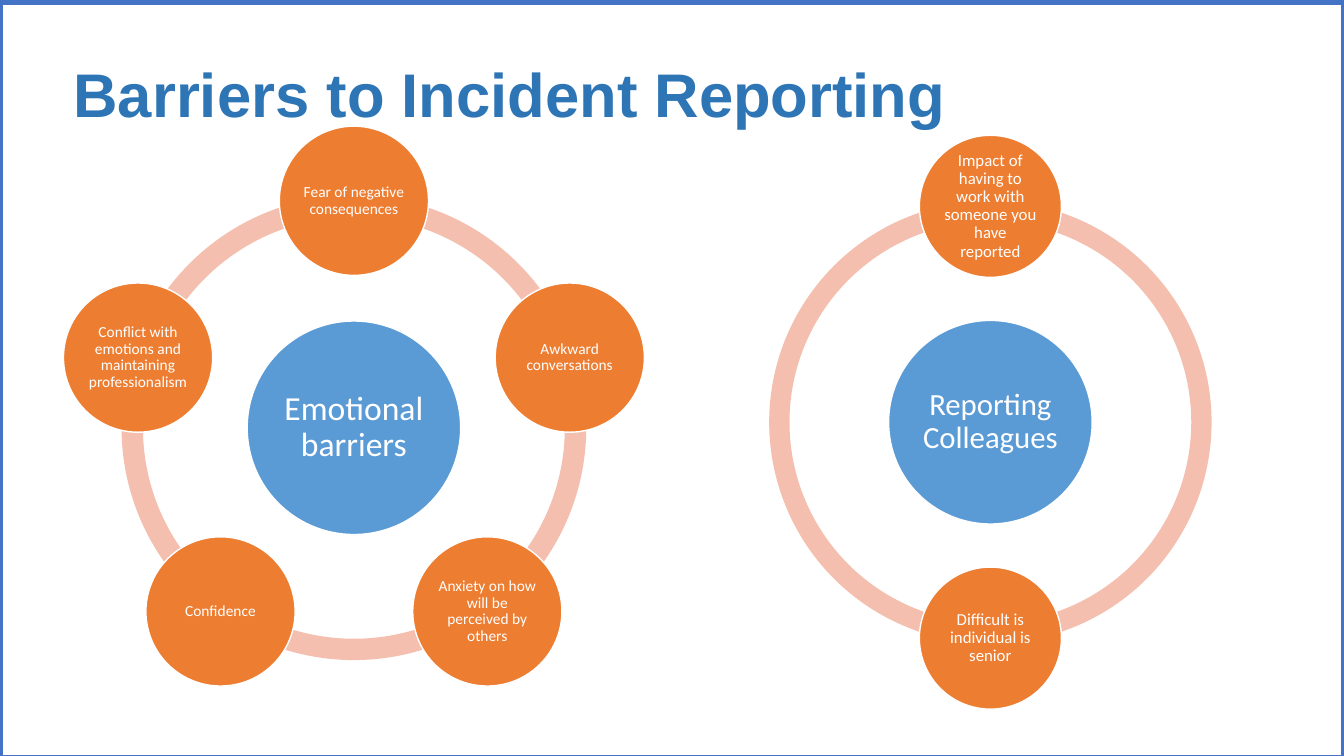
import math

import pptx
import pptx.dml.color
import pptx.enum.shapes
import pptx.enum.text
import pptx.util

Cm = pptx.util.Cm
Pt = pptx.util.Pt
SHAPE = pptx.enum.shapes.MSO_SHAPE
ALIGN = pptx.enum.text.PP_ALIGN

COLOURS = {
    "frame": "4472C4",
    "title": "2E75B6",
    "hub": "5B9BD5",
    "node": "ED7D31",
    "ring": "F4BFAE",
    "white": "FFFFFF",
}
TITLE = "Barriers to Incident Reporting"

# Lengths in cm, text sizes in points; nodes run clockwise from the top.
WHEELS = [
    {
        "hub": "Reporting Colleagues",
        "nodes": [
            "Impact of having to work with someone you have reported",
            "Difficult is individual is senior",
        ],
        "centre": (24.96, 10.64),
        "ring_size": 11.15, "orbit": 5.44, "hub_size": 5.13, "node_size": 3.58,
        "hub_pt": 22, "node_pt": 12,
    },
    {
        "hub": "Emotional barriers",
        "nodes": [
            "Fear of negative consequences",
            "Awkward conversations",
            "Anxiety on how will be perceived by others",
            "Confidence",
            "Conflict with emotions and maintaining professionalism",
        ],
        "centre": (8.92, 10.78),
        "ring_size": 11.71, "orbit": 5.72, "hub_size": 5.38, "node_size": 3.76,
        "hub_pt": 24, "node_pt": 11,
    },
]
RING_THICKNESS = 0.046
TOP_ANGLE = 270
ADJUSTMENT_PER_DEGREE = 0.6


def colour(name):
    return pptx.dml.color.RGBColor.from_string(COLOURS[name])


def write(shape, text, *, size, font="Calibri", ink="white", bold=False,
          align=ALIGN.CENTER, inset=0.06):
    frame = shape.text_frame
    frame.word_wrap = True
    frame.vertical_anchor = pptx.enum.text.MSO_ANCHOR.MIDDLE
    if inset is not None:
        frame.margin_left = frame.margin_right = Cm(inset)
        frame.margin_top = frame.margin_bottom = Cm(inset)
    paragraph = frame.paragraphs[0]
    paragraph.alignment = align
    paragraph.line_spacing = 0.9
    run = paragraph.add_run()
    run.text = text
    run.font.name = font
    run.font.size = Pt(size)
    run.font.bold = bold
    run.font.color.rgb = colour(ink)


def add_centred(shapes, kind, centre, size, fill):
    """Add a square-bounded shape around its centre, with no line."""
    x, y = centre
    shape = shapes.add_shape(kind, Cm(x - size / 2), Cm(y - size / 2), Cm(size), Cm(size))
    shape.shadow.inherit = False
    shape.fill.solid()
    shape.fill.fore_color.rgb = colour(fill)
    shape.line.fill.background()
    return shape


def add_disc(shapes, text, centre, size, fill, text_size):
    disc = add_centred(shapes, SHAPE.OVAL, centre, size, fill)
    disc.line.color.rgb = colour("white")
    disc.line.width = Pt(1)
    write(disc, text, size=text_size)


def add_wheel(slide, wheel):
    shapes = slide.shapes.add_group_shape().shapes
    centre = wheel["centre"]
    step = 360 / len(wheel["nodes"])
    angles = [TOP_ANGLE + step * i for i in range(len(wheel["nodes"]))]

    for angle in angles:
        arc = add_centred(shapes, SHAPE.BLOCK_ARC, centre, wheel["ring_size"], "ring")
        arc.adjustments[0] = angle % 360 * ADJUSTMENT_PER_DEGREE
        arc.adjustments[1] = (angle + step) % 360 * ADJUSTMENT_PER_DEGREE
        arc.adjustments[2] = RING_THICKNESS

    add_disc(shapes, wheel["hub"], centre, wheel["hub_size"], "hub", wheel["hub_pt"])
    for text, angle in zip(wheel["nodes"], angles):
        x = centre[0] + wheel["orbit"] * math.cos(math.radians(angle))
        y = centre[1] + wheel["orbit"] * math.sin(math.radians(angle))
        add_disc(shapes, text, (x, y), wheel["node_size"], "node", wheel["node_pt"])


def main():
    deck = pptx.Presentation()
    deck.slide_width, deck.slide_height = Cm(33.87), Cm(19.05)
    slide = deck.slides.add_slide(deck.slide_layouts[6])

    border = slide.shapes.add_shape(
        SHAPE.RECTANGLE, 0, Cm(0.05), deck.slide_width, deck.slide_height)
    border.shadow.inherit = False
    border.fill.background()
    border.line.color.rgb = colour("frame")
    border.line.width = Pt(4.5)

    title = slide.shapes.add_textbox(Cm(1.6), Cm(0.61), Cm(29.21), Cm(3.68))
    write(title, TITLE, size=44, font="Arial", ink="title", bold=True,
          align=ALIGN.LEFT, inset=None)

    for wheel in WHEELS:
        add_wheel(slide, wheel)
    deck.save("out.pptx")


if __name__ == "__main__":
    main()
